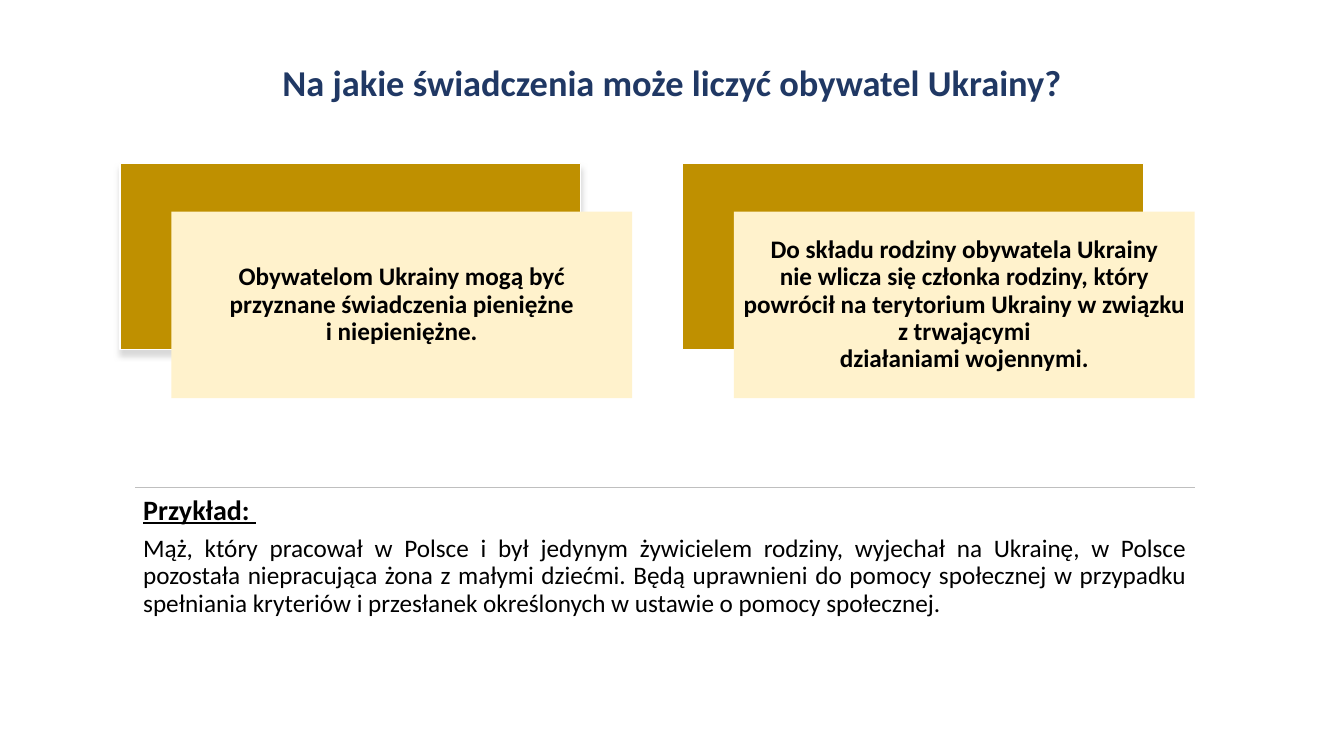
from lxml.etree import SubElement
from pptx import Presentation
from pptx.dml.color import RGBColor
from pptx.enum.shapes import MSO_CONNECTOR, MSO_SHAPE
from pptx.enum.text import MSO_ANCHOR as Anchor, PP_ALIGN as Align
from pptx.oxml.ns import qn
from pptx.util import Inches, Pt

NAVY = RGBColor(0x20, 0x38, 0x64)
GOLD = RGBColor(0xBF, 0x90, 0x00)
CREAM = RGBColor(0xFF, 0xF2, 0xCC)
WHITE = RGBColor(0xFF, 0xFF, 0xFF)
BLACK = RGBColor(0, 0, 0)
GREY = RGBColor(0xBF, 0xBF, 0xBF)

TITLE = "Na jakie świadczenia może liczyć obywatel Ukrainy?"
CARDS = [
    "Obywatelom Ukrainy mogą być\vprzyznane świadczenia pieniężne\v"
    "i niepieniężne.",
    "Do składu rodziny obywatela Ukrainy\vnie wlicza się członka rodziny, który\v"
    "powrócił na terytorium Ukrainy w związku z trwającymi\v"
    "działaniami wojennymi.",
]
HEAD = "Przykład: "
CASE = (
    "Mąż, który pracował w Polsce i był jedynym żywicielem rodziny, wyjechał "
    "na Ukrainę, w Polsce pozostała niepracująca żona z małymi dziećmi. Będą "
    "uprawnieni do pomocy społecznej w przypadku spełniania kryteriów "
    "i przesłanek określonych w ustawie o pomocy społecznej."
)


def style(para, text, size, align, color=BLACK, bold=True, line=False):
    para.text = text
    para.alignment = align
    para.line_spacing = 0.9
    font = para.font
    font.name = "Calibri"
    font.size = Pt(size)
    font.bold = bold
    font.underline = line
    font.color.rgb = color


def set_frame(shape, inset, anchor):
    frame = shape.text_frame
    frame.word_wrap = True
    frame.vertical_anchor = anchor
    frame.margin_left = frame.margin_right = Inches(inset)
    frame.margin_top = frame.margin_bottom = Inches(inset)
    return frame


def add_box(slide, left, top, fill):
    box = slide.shapes.add_shape(
        MSO_SHAPE.RECTANGLE, Inches(left), Inches(top), Inches(4.57), Inches(1.85)
    )
    box.shadow.inherit = False
    box.fill.solid()
    box.fill.fore_color.rgb = fill
    box.line.fill.background()
    return box


def add_shade(shape):
    """Cast a soft light-grey shadow straight down."""
    effects = shape._element.spPr.find(qn("a:effectLst"))
    shade = SubElement(
        effects, qn("a:outerShdw"), blurRad=str(Pt(4)), dist=str(Pt(4)),
        dir="5400000", algn="t", rotWithShape="0",
    )
    SubElement(shade, qn("a:srgbClr"), val="D9D9D9")


def add_card(slide, left, text, shade):
    """Place a cream text panel over an offset gold one."""
    back = add_box(slide, left, 1.62, GOLD)
    back.line.color.rgb = WHITE
    back.line.width = Pt(1)
    if shade:
        add_shade(back)
    front = add_box(slide, left + 0.51, 2.1, CREAM)
    frame = set_frame(front, 0.07, Anchor.MIDDLE)
    style(frame.paragraphs[0], text, 18, Align.CENTER)


def add_text(slide, left, top, width, height, inset, anchor):
    box = slide.shapes.add_textbox(
        Inches(left), Inches(top), Inches(width), Inches(height)
    )
    return set_frame(box, inset, anchor)


def add_rule(slide, left, right, top):
    rule = slide.shapes.add_connector(
        MSO_CONNECTOR.STRAIGHT, Inches(left), Inches(top), Inches(right), Inches(top)
    )
    rule.line.color.rgb = GREY
    rule.line.width = Pt(0.5)
    SubElement(rule._element.spPr, qn("a:effectLst"))


def main():
    deck = Presentation()
    deck.slide_width, deck.slide_height = Inches(13.33), Inches(7.5)
    slide = deck.slides.add_slide(deck.slide_layouts[6])

    title = add_text(slide, 0.92, 0.5, 11.5, 0.68, 0.05, Anchor.MIDDLE)
    style(title.paragraphs[0], TITLE, 26, Align.CENTER, NAVY)

    for i, text in enumerate(CARDS):
        add_card(slide, 1.19 + i * 5.58, text, shade=i == 0)

    add_rule(slide, 1.34, 11.85, 4.84)
    case = add_text(slide, 1.34, 4.84, 10.51, 1.82, 0.08, Anchor.TOP)
    head = case.paragraphs[0]
    style(head, HEAD, 20, Align.LEFT, line=True)
    head.space_after = Pt(7)
    style(case.add_paragraph(), CASE, 18, Align.JUSTIFY, bold=False)

    deck.save("out.pptx")


if __name__ == "__main__":
    main()
